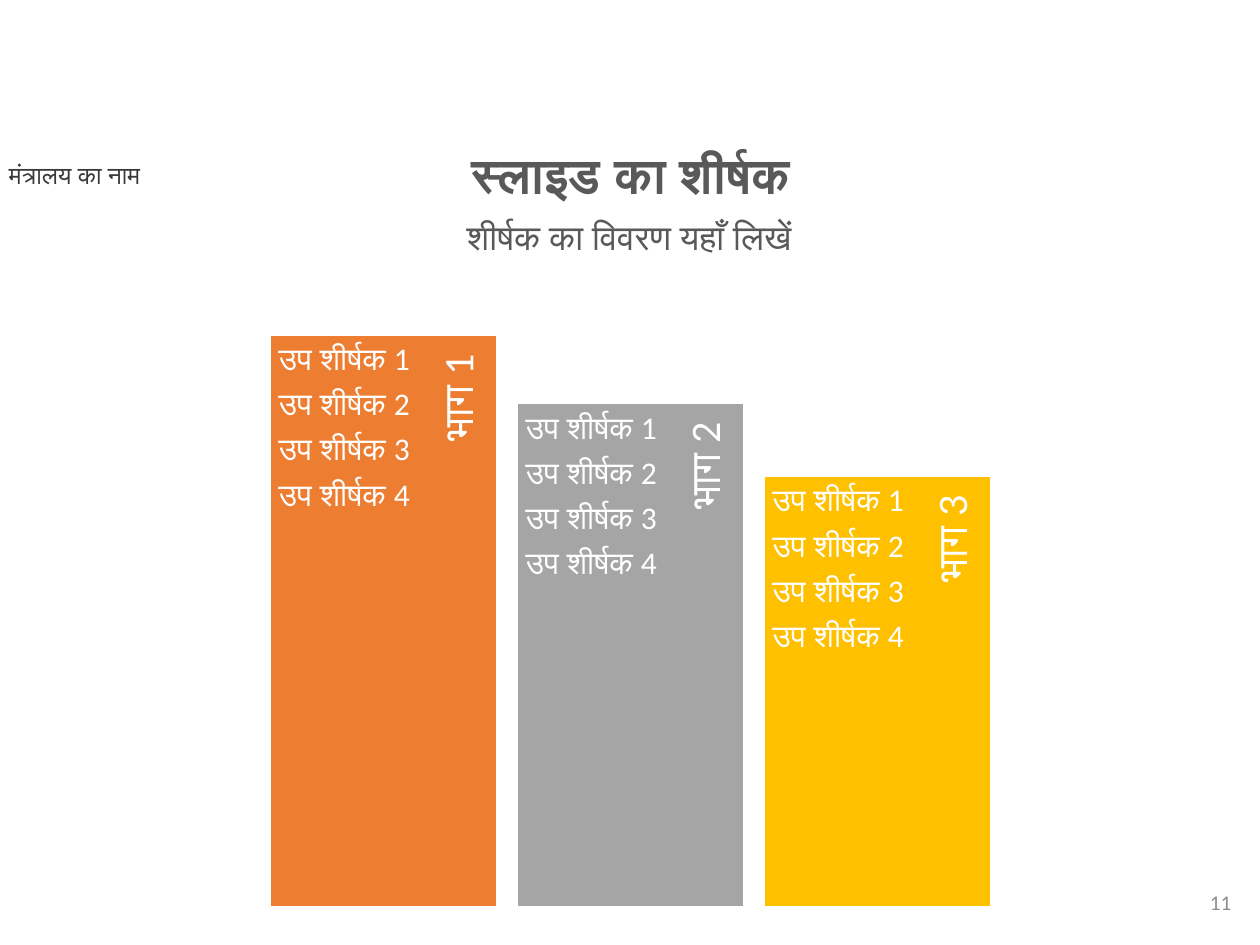
from pptx import Presentation
from pptx.dml.color import RGBColor
from pptx.enum.shapes import MSO_SHAPE
from pptx.enum.text import MSO_ANCHOR, PP_ALIGN
from pptx.util import Pt

RECT = MSO_SHAPE.RECTANGLE
TOP, MIDDLE = MSO_ANCHOR.TOP, MSO_ANCHOR.MIDDLE
LEFT, CENTER, RIGHT = PP_ALIGN.LEFT, PP_ALIGN.CENTER, PP_ALIGN.RIGHT

WHITE = RGBColor(0xFF, 0xFF, 0xFF)
DARK = RGBColor(0x3B, 0x38, 0x38)
GRAY = RGBColor(0x59, 0x59, 0x59)
PALE = RGBColor(0x8C, 0x8C, 0x8C)
ORANGE = RGBColor(0xED, 0x7D, 0x31)
SILVER = RGBColor(0xA5, 0xA5, 0xA5)
GOLD = RGBColor(0xFF, 0xC0, 0x00)


def write(frame, text, size=18, color=WHITE, bold=False, align=LEFT,
          anchor=TOP, line=None, after=0, inset=(7.2, 3.6, 7.2, 3.6),
          font="Calibri"):
    """Fill a text frame, one paragraph for each line of text."""
    frame.word_wrap = True
    frame.vertical_anchor = anchor
    (frame.margin_left, frame.margin_top,
     frame.margin_right, frame.margin_bottom) = map(Pt, inset)
    frame.text = text
    for para in frame.paragraphs:
        para.alignment = align
        para.line_spacing = line
        para.space_after = Pt(after)
        run = para.runs[0].font
        run.name, run.size, run.bold = font, Pt(size), bold
        run.color.rgb = color


class Deck:
    font = "Calibri"
    edge = WHITE

    def __init__(self, wide, high):
        self.file = Presentation()
        self.file.slide_width, self.file.slide_height = Pt(wide), Pt(high)
        self.slide = self.file.slides.add_slide(self.file.slide_layouts[6])

    def text(self, x, y, w, h, text, turn=0, **style):
        box = self.slide.shapes.add_textbox(Pt(x), Pt(y), Pt(w), Pt(h))
        box.rotation = turn
        write(box.text_frame, text, font=self.font, **style)

    def bar(self, x, y, w, h, color):
        shape = self.slide.shapes.add_shape(RECT, Pt(x), Pt(y), Pt(w), Pt(h))
        shape.shadow.inherit = False
        shape.fill.solid()
        shape.fill.fore_color.rgb = color
        shape.line.color.rgb = self.edge
        shape.line.width = Pt(1)


def main():
    deck = Deck(720, 540)

    # Ministry name, page number and headings
    deck.text(-2, 87.8, 157, 24.5, "मंत्रालय का नाम", size=14, color=DARK)
    deck.text(548.6, 501, 162, 28.8, "11", size=12, color=PALE,
              align=RIGHT, anchor=MIDDLE)
    deck.text(105, 122.4, 509, 45.4, "शीर्षक का विवरण यहाँ लिखें", size=20,
              color=GRAY, align=CENTER, line=0.9)
    deck.text(134, 82.8, 453, 33.8, "स्लाइड का शीर्षक", size=28,
              color=GRAY, bold=True, align=CENTER, line=0.9)

    # Falling bars, each with a turned label and a list
    start, step, wide, base = 154.2, 141.1, 129.6, 518
    deep = 33.8
    items = "\n".join(f"उप शीर्षक {n}" for n in range(1, 5))
    bars = [(191.4, ORANGE), (230.4, SILVER), (272, GOLD)]
    for i, (top, color) in enumerate(bars):
        x, high = start + i * step, base - top
        deck.bar(x, top, wide, high, color)
        # The label is turned about its centre and starts at the bar's top
        span = 0.9 * high
        deck.text(x + 109.5 - span / 2, top + (span - deep) / 2, span, deep,
                  f"भाग {i + 1}", turn=270, size=24, align=RIGHT,
                  anchor=MIDDLE, line=0.9, after=8.4,
                  inset=(7.2, 0, 10.8, 2))
        deck.text(x, top, 92.2, high + 1.5, items, line=0.9, after=6.3,
                  inset=(5, 5, 5, 5))

    deck.file.save("out.pptx")


if __name__ == "__main__":
    main()
